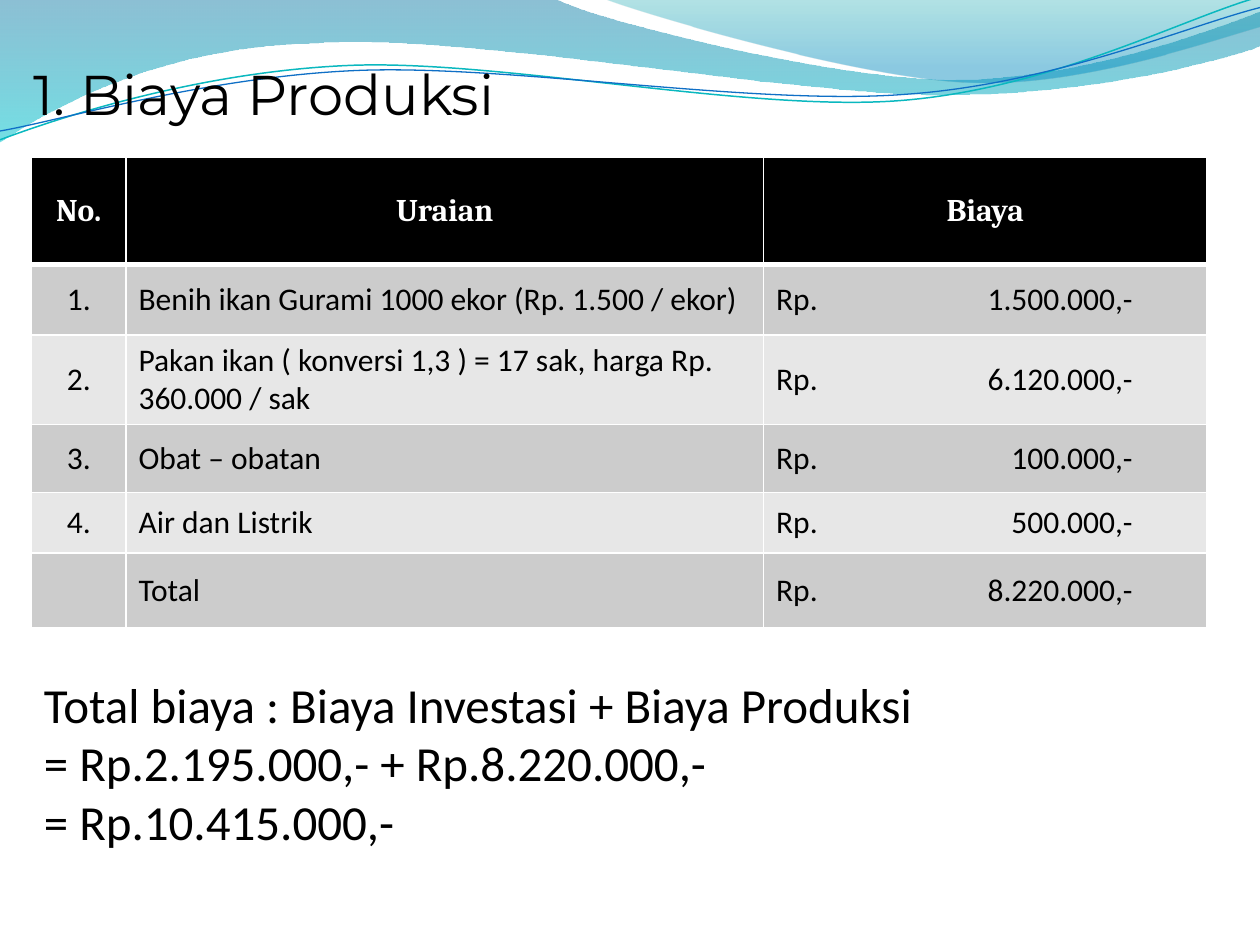
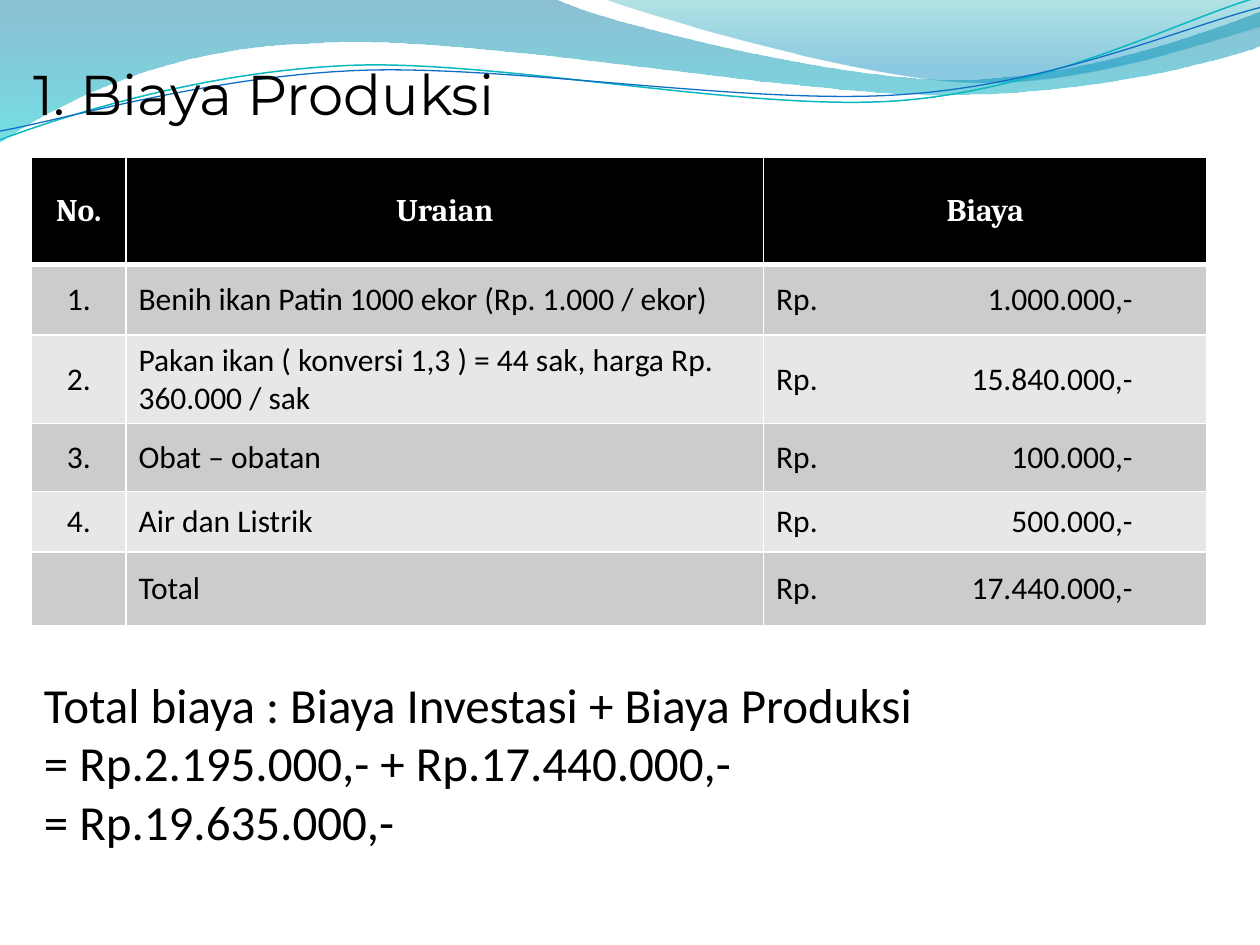
from dataclasses import dataclass
from typing import NamedTuple

from lxml import etree
from pptx import Presentation
from pptx import util as u
from pptx.dml.color import RGBColor
from pptx.enum import text
from pptx.oxml import ns

Point = tuple[float, float]


@dataclass(frozen=True)
class Theme:
    black: str = "000000"
    white: str = "FFFFFF"
    row_fills: tuple[str, str] = ("CCCCCC", "E7E7E7")
    title_font: str = "Montserrat"
    header_font: str = "Cambria"
    body_font: str = "Calibri"
    title_size: int = 32
    summary_size: int = 28
    table_size: int = 18
    border: float = 1
    header_rule: float = 3


THEME = Theme()


class GradientStop(NamedTuple):
    position: float
    color: str
    opacity: int


class Segment(NamedTuple):
    """A line to one point, or a Bezier curve through two controls to a third."""
    points: tuple[Point, ...]


class Wave(NamedTuple):
    start: Point
    segments: tuple[Segment, ...]
    stops: tuple[GradientStop, ...] = ()
    line_color: str = ""
    line_width: float = 0


class Cost(NamedTuple):
    number: str
    item: str
    amount: str


class CostSlide(NamedTuple):
    costs: tuple[Cost, ...]
    summary: tuple[str, ...]


WAVES = (
    Wave(
        (0, 0),
        (
            Segment(((4.4, -0.01),)),
            Segment(((4.76, 0.17), (6.64, 0.63), (7.58, 0.63))),
            Segment(((8.53, 0.63), (9.58, 0.26), (10, 0.09))),
            Segment(((10.01, 0.36),)),
            Segment(((9.83, 0.44), (8.7, 0.76), (7.46, 0.75))),
            Segment(((6.22, 0.75), (3.82, 0.28), (2.57, 0.34))),
            Segment(((1.29, 0.36), (0.46, 0.83), (-0.01, 1.13))),
            Segment(((0, 0),)),
        ),
        stops=(GradientStop(0, "0074A1", 45), GradientStop(1, "00C6CF", 55)),
    ),
    Wave(
        (4.79, -0.01),
        (
            Segment(((5.09, 0.11), (6.82, 0.62), (7.69, 0.65))),
            Segment(((8.56, 0.69), (9.61, 0.32), (10, 0.21))),
            Segment(((10, 0),)),
            Segment(((4.79, -0.01),)),
        ),
        stops=(GradientStop(0, "00A1A9", 30), GradientStop(0.8, "008BBF", 45)),
    ),
    Wave(
        (0, 1.11),
        (
            Segment(((0.48, 0.93), (1.58, 0.57), (2.77, 0.52))),
            Segment(((3.95, 0.47), (5.93, 0.89), (7.13, 0.8))),
            Segment(((8.33, 0.71), (9.38, 0.15), (9.98, -0.02))),
        ),
        line_color="0AB8BF",
        line_width=0.85,
    ),
    Wave(
        (0, 1.04),
        (
            Segment(((0.47, 0.96), (1.64, 0.61), (2.83, 0.56))),
            Segment(((4.03, 0.51), (5.97, 0.84), (7.17, 0.75))),
            Segment(((8.36, 0.67), (9.41, 0.21), (10, 0.06))),
        ),
        line_color="0F6FC6",
        line_width=0.75,
    ),
)

TITLE = "1. Biaya Produksi"
HEADERS = ("No.", "Uraian", "Biaya")
COLUMN_WIDTHS = (0.75, 5.06, 3.52)
ROW_HEIGHTS = (0.85, 0.56, 0.7, 0.54, 0.48, 0.59)
AMOUNT_TAB = 2.83


def cost_slide(fish: str, price: str, seed: str, sacks: int, feed: str,
               production: str, total: str) -> CostSlide:
    """Fill in the figures that differ from one fish to the next."""
    return CostSlide(
        (
            Cost("1.", f"Benih ikan {fish} 1000 ekor (Rp. {price} / ekor)", seed),
            Cost("2.", f"Pakan ikan ( konversi 1,3 ) = {sacks} sak, harga Rp. 360.000 / sak", feed),
            Cost("3.", "Obat – obatan", "100.000"),
            Cost("4.", "Air dan Listrik", "500.000"),
            Cost("", "Total", production),
        ),
        (
            "Total biaya : Biaya Investasi + Biaya Produksi",
            f"= Rp.2.195.000,- + Rp.{production},-",
            f"= Rp.{total},-",
        ),
    )


COST_SLIDES = (
    cost_slide("Gurami", "1.500", "1.500.000", 17, "6.120.000", "8.220.000", "10.415.000"),
    cost_slide("Patin", "1.000", "1.000.000", 44, "15.840.000", "17.440.000", "19.635.000"),
)


def to_emu(point: Point) -> tuple[int, int]:
    return u.Inches(point[0]), u.Inches(point[1])


def bend_segments(shape, segments: tuple[Segment, ...]) -> None:
    """Turn the straight segments that have control points into Bezier curves."""
    lines = list(shape.element.spPr.iter(ns.qn("a:lnTo")))
    for line, segment in zip(lines, segments):
        if len(segment.points) == 1:
            continue
        curve = etree.Element(ns.qn("a:cubicBezTo"))
        for x, y in map(to_emu, segment.points):
            etree.SubElement(curve, ns.qn("a:pt"), x=str(x - shape.left), y=str(y - shape.top))
        line.getparent().replace(line, curve)


def fill_gradient(shape, stops: tuple[GradientStop, ...]) -> None:
    shape.fill.gradient()
    shape.fill.gradient_angle = 270
    for gradient_stop, stop in zip(shape.fill.gradient_stops, stops):
        gradient_stop.position = stop.position
        gradient_stop.color.rgb = RGBColor.from_string(stop.color)
    for color, stop in zip(shape.element.spPr.iter(ns.qn("a:srgbClr")), stops):
        etree.SubElement(color, ns.qn("a:alpha"), val=str(stop.opacity * 1000))


def draw_wave(slide, wave: Wave) -> None:
    builder = slide.shapes.build_freeform(*to_emu(wave.start))
    ends = [to_emu(segment.points[-1]) for segment in wave.segments]
    builder.add_line_segments(ends, close=bool(wave.stops))
    shape = builder.convert_to_shape()
    bend_segments(shape, wave.segments)
    shape.shadow.inherit = False
    if wave.stops:
        fill_gradient(shape, wave.stops)
        shape.line.fill.background()
    else:
        shape.fill.background()
        shape.line.color.rgb = RGBColor.from_string(wave.line_color)
        shape.line.width = u.Pt(wave.line_width)


def format_paragraph(paragraph, font: str, size: int, color: str = THEME.black,
                     bold: bool = False) -> None:
    for run in paragraph.runs:
        run.font.name = font
        run.font.size = u.Pt(size)
        run.font.bold = bold
        run.font.color.rgb = RGBColor.from_string(color)


def add_text(slide, box: tuple[float, float, float, float], lines: tuple[str, ...],
             font: str, size: int, anchor: text.MSO_ANCHOR) -> None:
    frame = slide.shapes.add_textbox(*map(u.Inches, box)).text_frame
    frame.word_wrap = True
    frame.vertical_anchor = anchor
    frame.text = "\n".join(lines)
    for paragraph in frame.paragraphs:
        format_paragraph(paragraph, font, size)


def set_borders(cell, top: float, bottom: float) -> None:
    widths = {"a:lnL": THEME.border, "a:lnR": THEME.border, "a:lnT": top, "a:lnB": bottom}
    properties = cell._tc.get_or_add_tcPr()
    for index, (tag, width) in enumerate(widths.items()):
        line = etree.Element(ns.qn(tag), w=str(u.Pt(width)))
        fill = etree.SubElement(line, ns.qn("a:solidFill"))
        etree.SubElement(fill, ns.qn("a:srgbClr"), val=THEME.white)
        properties.insert(index, line)


def add_amount_tab(paragraph) -> None:
    tabs = etree.SubElement(paragraph._p.get_or_add_pPr(), ns.qn("a:tabLst"))
    etree.SubElement(tabs, ns.qn("a:tab"), pos=str(u.Inches(AMOUNT_TAB)), algn="r")


def draw_cell(cell, value: str, row: int, column: int) -> None:
    header = row == 0
    cell.text_frame.text = value
    cell.vertical_anchor = text.MSO_ANCHOR.MIDDLE
    cell.fill.solid()
    fill = THEME.black if header else THEME.row_fills[(row - 1) % 2]
    cell.fill.fore_color.rgb = RGBColor.from_string(fill)
    paragraph = cell.text_frame.paragraphs[0]
    if header or column == 0:
        paragraph.alignment = text.PP_ALIGN.CENTER
    elif column == 2:
        add_amount_tab(paragraph)
    format_paragraph(
        paragraph,
        THEME.header_font if header else THEME.body_font,
        THEME.table_size,
        THEME.white if header else THEME.black,
        header,
    )
    set_borders(
        cell,
        top=THEME.header_rule if row == 1 else THEME.border,
        bottom=THEME.header_rule if header else THEME.border,
    )


def add_cost_table(slide, costs: tuple[Cost, ...]) -> None:
    rows = [HEADERS, *((c.number, c.item, f"Rp.\t{c.amount},-") for c in costs)]
    box = (0.25, 1.25, sum(COLUMN_WIDTHS), sum(ROW_HEIGHTS))
    table = slide.shapes.add_table(len(rows), len(HEADERS), *map(u.Inches, box)).table
    table.first_row = False
    table.horz_banding = False
    for column, width in zip(table.columns, COLUMN_WIDTHS):
        column.width = u.Inches(width)
    for row, height in zip(table.rows, ROW_HEIGHTS):
        row.height = u.Inches(height)
    for row, values in enumerate(rows):
        for column, value in enumerate(values):
            draw_cell(table.cell(row, column), value, row, column)


def add_cost_slide(presentation, content: CostSlide) -> None:
    slide = presentation.slides.add_slide(presentation.slide_layouts[6])
    for wave in WAVES:
        draw_wave(slide, wave)
    add_cost_table(slide, content.costs)
    add_text(slide, (0.17, 0.42, 9.5, 0.64), (TITLE,),
             THEME.title_font, THEME.title_size, text.MSO_ANCHOR.MIDDLE)
    add_text(slide, (0.25, 4.75, 9.33, 2.05), content.summary,
             THEME.body_font, THEME.summary_size, text.MSO_ANCHOR.BOTTOM)


def main() -> None:
    presentation = Presentation()
    presentation.slide_width = u.Inches(10)
    presentation.slide_height = u.Inches(7.5)
    for content in COST_SLIDES:
        add_cost_slide(presentation, content)
    presentation.save("out.pptx")


if __name__ == "__main__":
    main()
